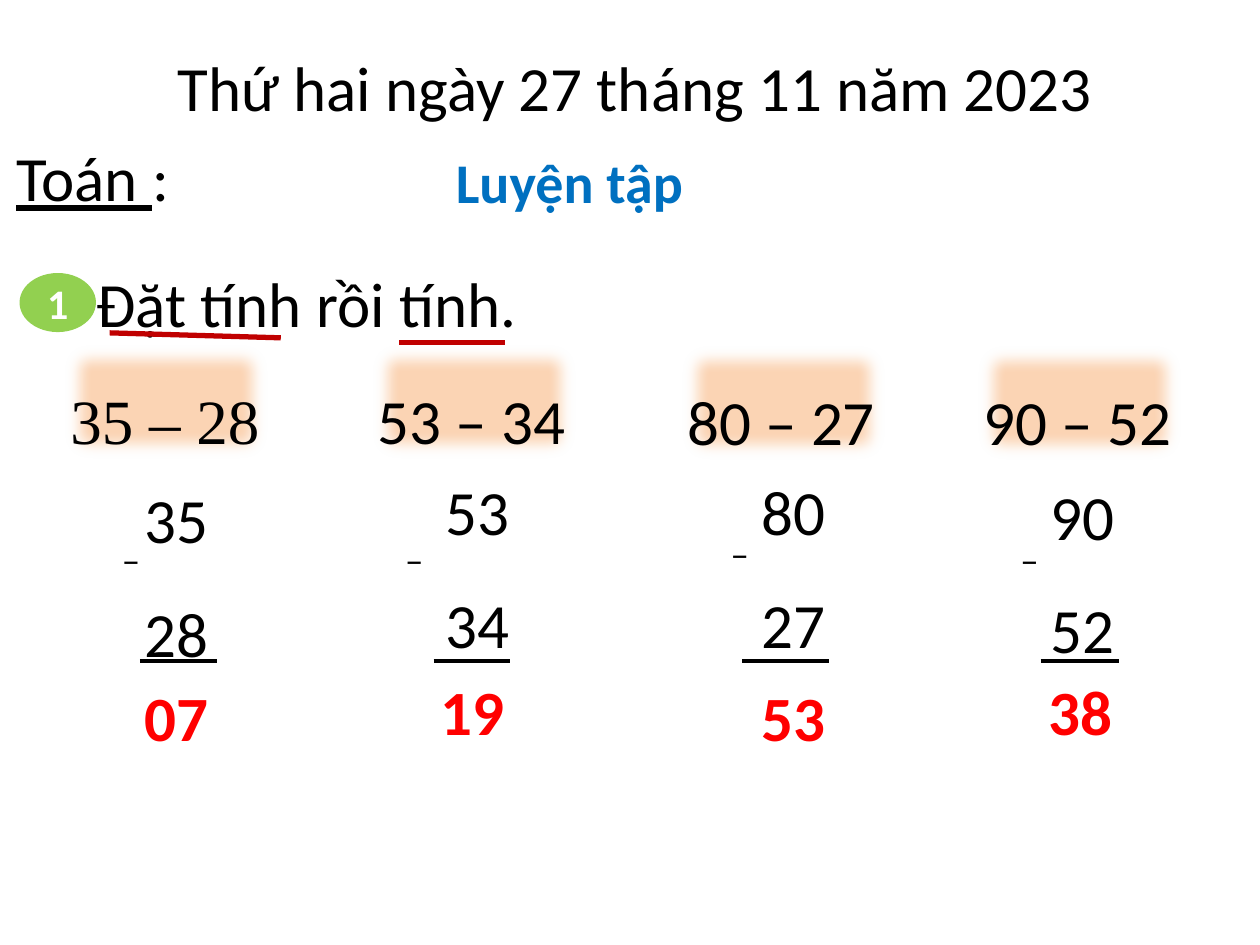
import pptx
import pptx.util
import pptx.dml.color
import pptx.enum.shapes
import pptx.enum.text
import pptx.oxml
import pptx.oxml.ns
from pptx.util import Cm

COLOURS = {"ink": "000000", "topic": "0070C0", "badge": "92D050", "white": "FFFFFF",
           "peach": "FCD5B5", "answer": "FF0000", "underline": "C00000"}
SHAPES = pptx.enum.shapes.MSO_SHAPE
ALIGN = pptx.enum.text.PP_ALIGN
ANCHOR = pptx.enum.text.MSO_ANCHOR
AUTO = pptx.enum.text.MSO_AUTO_SIZE


def rgb(name):
    return pptx.dml.color.RGBColor.from_string(COLOURS[name])


def write(shape, lines, size=36, colour="ink", bold=False, font="Calibri",
          spacing=1.0, wrap=False, align=ALIGN.LEFT, anchor=ANCHOR.TOP,
          fit=AUTO.SHAPE_TO_FIT_TEXT):
    """Fill a shape with lines, each a list of (text, underlined) runs."""
    frame = shape.text_frame
    frame.word_wrap = wrap
    frame.auto_size = fit
    frame.vertical_anchor = anchor
    for number, runs in enumerate(lines):
        paragraph = frame.add_paragraph() if number else frame.paragraphs[0]
        paragraph.alignment = align
        paragraph.line_spacing = spacing
        for text, underlined in runs:
            run = paragraph.add_run()
            run.text = text
            run.font.name = font
            run.font.size = pptx.util.Pt(size)
            run.font.bold = bold
            run.font.underline = underlined
            run.font.color.rgb = rgb(colour)


deck = pptx.Presentation()
deck.slide_width, deck.slide_height = Cm(25.4), Cm(19.05)
slide = deck.slides.add_slide(deck.slide_layouts[5])
shapes = slide.shapes

# Heading: date, subject and topic
date = shapes.title
date.left, date.top, date.width, date.height = Cm(3.33), Cm(0.86), Cm(20.6), Cm(1.8)
write(date, [[("Thứ hai ngày 27 tháng 11 năm 2023", False)]], wrap=True)

subject = shapes.add_textbox(Cm(0.08), Cm(2.67), Cm(7.82), Cm(1.8))
write(subject, [[("Toán ", True), (":", False)]], wrap=True)

topic = shapes.add_textbox(Cm(8.94), Cm(2.84), Cm(12), Cm(1.62))
write(topic, [[("Luyện tập", False)]], size=32, colour="topic", bold=True, wrap=True)

# Exercise number and instruction
badge = shapes.add_shape(SHAPES.OVAL, Cm(0.43), Cm(5.54), Cm(1.47), Cm(1.12))
badge.shadow.inherit = False
badge.fill.solid()
badge.fill.fore_color.rgb = rgb("badge")
badge.line.color.rgb = rgb("badge")
badge.line.width = pptx.util.Pt(2)
write(badge, [[("1", False)]], size=24, colour="white", bold=True, wrap=True,
      align=ALIGN.CENTER, anchor=ANCHOR.MIDDLE, fit=AUTO.NONE)

instruction = shapes.add_textbox(Cm(1.7), Cm(5.21), Cm(9.07), Cm(1.8))
write(instruction, [[("Đặt tính rồi tính.", False)]])

# Subtractions: terms, answer, font, then (left, top) of the question box,
# the stacked terms, the minus sign and the answer, then the rule's ends
subtractions = [
    ("35", "28", "07", "Times New Roman",
     (1.17, 6.81), (2.67, 8.81), (2.21, 10.69), (2.67, 13.56), (2.82, 4.37)),
    ("53", "34", "19", "Calibri",
     (7.37, 6.81), (8.74, 8.64), (7.92, 10.69), (8.64, 13.44), (8.74, 10.29)),
    ("80", "27", "53", "Calibri",
     (13.61, 6.83), (15.11, 8.64), (14.48, 10.57), (15.11, 13.56), (14.96, 16.71)),
    ("90", "52", "38", "Calibri",
     (19.58, 6.83), (20.93, 8.74), (20.32, 10.69), (20.88, 13.44), (20.98, 22.56)),
]
strokes = [(2.21, 6.71, 5.66, 6.81, "underline", 3),
           (8.05, 6.91, 10.19, 6.91, "underline", 3)]

for first, second, result, font, box_at, terms_at, minus_at, result_at, rule in subtractions:
    question = shapes.add_shape(SHAPES.RECTANGLE, *map(Cm, box_at), Cm(4.37), Cm(2.57))
    question.fill.solid()
    question.fill.fore_color.rgb = rgb("peach")
    question.line.fill.background()
    question.shadow.inherit = False
    effects = question._element.spPr.find(pptx.oxml.ns.qn("a:effectLst"))
    effects.append(pptx.oxml.parse_xml(
        f'<a:softEdge {pptx.oxml.ns.nsdecls("a")} rad="127000"/>'))
    write(question, [[(f"{first} – {second}", False)]], font=font, spacing=1.5)

    terms = shapes.add_textbox(*map(Cm, terms_at), Cm(1.8), Cm(4.88))
    write(terms, [[(first, False)], [(second, False)]], spacing=1.5)

    minus = shapes.add_textbox(*map(Cm, minus_at), Cm(0.91), Cm(1.14))
    write(minus, [[("–", False)]], size=21)

    answer = shapes.add_textbox(*map(Cm, result_at), Cm(1.8), Cm(1.8))
    write(answer, [[(result, False)]], colour="answer", bold=True)

    strokes.append((rule[0], 13.32, rule[1], 13.32, "ink", 2.25))

# Rules under the terms and red strokes under the key words
for x1, y1, x2, y2, colour, width in strokes:
    stroke = shapes.add_connector(pptx.enum.shapes.MSO_CONNECTOR.STRAIGHT,
                                  Cm(x1), Cm(y1), Cm(x2), Cm(y2))
    stroke.line.color.rgb = rgb(colour)
    stroke.line.width = pptx.util.Pt(width)
    stroke._element.spPr.append(pptx.oxml.parse_xml(
        f'<a:effectLst {pptx.oxml.ns.nsdecls("a")}/>'))

deck.save("out.pptx")
